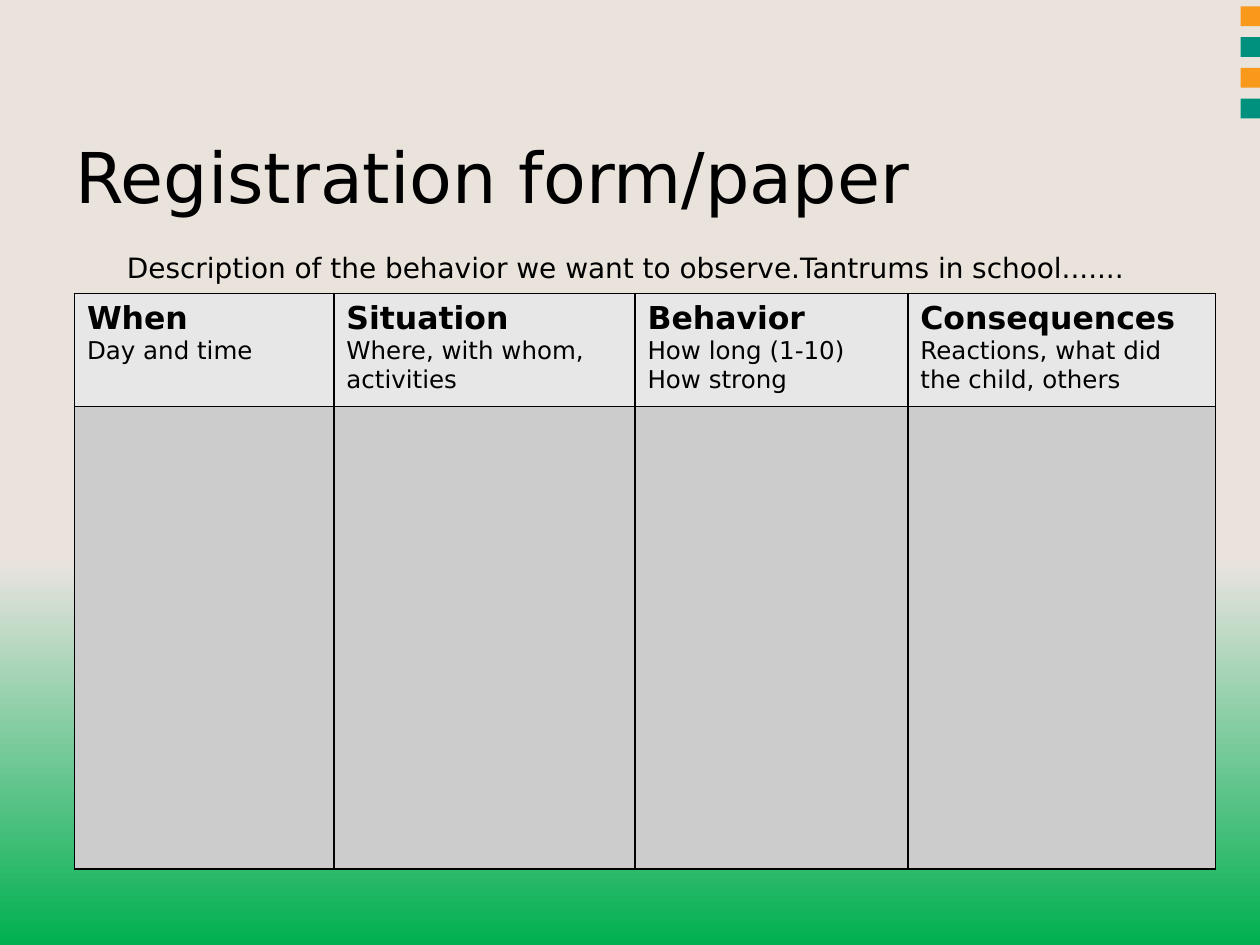
from copy import deepcopy

from lxml.etree import SubElement
from pptx import Presentation
from pptx.dml.color import RGBColor
from pptx.enum.shapes import MSO_SHAPE
from pptx.enum.text import MSO_ANCHOR
from pptx.oxml.ns import qn
from pptx.util import Cm, Pt

COLORS = {
    "sand": "E9E3DC",
    "mist": "E6E2DE",
    "grass": "00B050",
    "orange": "F8991C",
    "teal": "00907E",
    "text": "000000",
    "border": "000000",
    "header": "E7E7E7",
    "body": "CCCCCC",
}

COLUMNS = [
    (5.23, "When", ["Day and time"]),
    (6.07, "Situation", ["Where, with whom, activities"]),
    (5.5, "Behavior", ["How long (1-10)", "How strong"]),
    (6.2, "Consequences", ["Reactions, what did the child, others"]),
]
ROW_HEIGHTS = [2.28, 9.32]


def rgb(name):
    return RGBColor.from_string(COLORS[name])


class SlideBuilder:
    font = "DejaVu Sans"

    def __init__(self, slide):
        self.s = slide

    def background(self, stops):
        fill = self.s.background.fill
        fill.gradient()
        fill.gradient_angle = 270
        gs_list = self.s.element.find(".//" + qn("a:gsLst"))
        gs_list.append(deepcopy(gs_list[-1]))
        for stop, (position, color) in zip(fill.gradient_stops, stops):
            stop.position = position
            stop.color.rgb = rgb(color)

    def rect(self, x, y, w, h, color):
        sp = self.s.shapes.add_shape(MSO_SHAPE.RECTANGLE, Cm(x), Cm(y), Cm(w), Cm(h))
        sp.shadow.inherit = False
        sp.fill.solid()
        sp.fill.fore_color.rgb = rgb(color)
        sp.line.fill.background()

    def paragraph(self, p, text, size, bold=False):
        p.text = text
        p.font.name = self.font
        p.font.size = Pt(size)
        p.font.bold = bold
        p.font.color.rgb = rgb("text")

    def text(self, x, y, w, h, text, size, anchor=MSO_ANCHOR.TOP, indent=0):
        tf = self.s.shapes.add_textbox(Cm(x), Cm(y), Cm(w), Cm(h)).text_frame
        tf.word_wrap = True
        tf.vertical_anchor = anchor
        p = tf.paragraphs[0]
        p._p.get_or_add_pPr().set("marL", str(Cm(indent)))
        self.paragraph(p, text, size)

    def cell(self, cell, color):
        tc_pr = cell._tc.get_or_add_tcPr()
        for side in ("a:lnL", "a:lnR", "a:lnT", "a:lnB"):
            ln = SubElement(tc_pr, qn(side), w=str(Pt(1)))
            SubElement(SubElement(ln, qn("a:solidFill")), qn("a:srgbClr"), val=COLORS["border"])
        cell.fill.solid()
        cell.fill.fore_color.rgb = rgb(color)

    def table(self, x, y, columns, heights):
        width = sum(column[0] for column in columns)
        table = self.s.shapes.add_table(
            len(heights), len(columns), Cm(x), Cm(y), Cm(width), Cm(sum(heights))
        ).table
        for row, height in zip(table.rows, heights):
            row.height = Cm(height)
        for i, (col_width, heading, hints) in enumerate(columns):
            table.columns[i].width = Cm(col_width)
            head = table.cell(0, i)
            self.cell(head, "header")
            self.cell(table.cell(1, i), "body")
            tf = head.text_frame
            self.paragraph(tf.paragraphs[0], heading, 18, bold=True)
            for hint in hints:
                self.paragraph(tf.add_paragraph(), hint, 14)


def main():
    prs = Presentation()
    prs.slide_width, prs.slide_height = Cm(25.4), Cm(19.05)
    b = SlideBuilder(prs.slides.add_slide(prs.slide_layouts[6]))
    b.background([(0, "sand"), (0.6, "mist"), (1, "grass")])
    b.rect(0, 0, 25.4, 2.51, "sand")
    for i, color in enumerate(["orange", "teal"] * 2):
        b.rect(25.01, 0.13 + 0.62 * i, 0.39, 0.4, color)
    b.text(1.27, 2.13, 22.86, 2.8, "Registration form/paper", 40, MSO_ANCHOR.MIDDLE)
    b.text(
        1.27, 4.93, 22.86, 12.22,
        "Description of the behavior we want to observe.Tantrums in school.......",
        16, indent=1.04,
    )
    b.table(1.5, 5.92, COLUMNS, ROW_HEIGHTS)
    prs.save("out.pptx")


if __name__ == "__main__":
    main()
